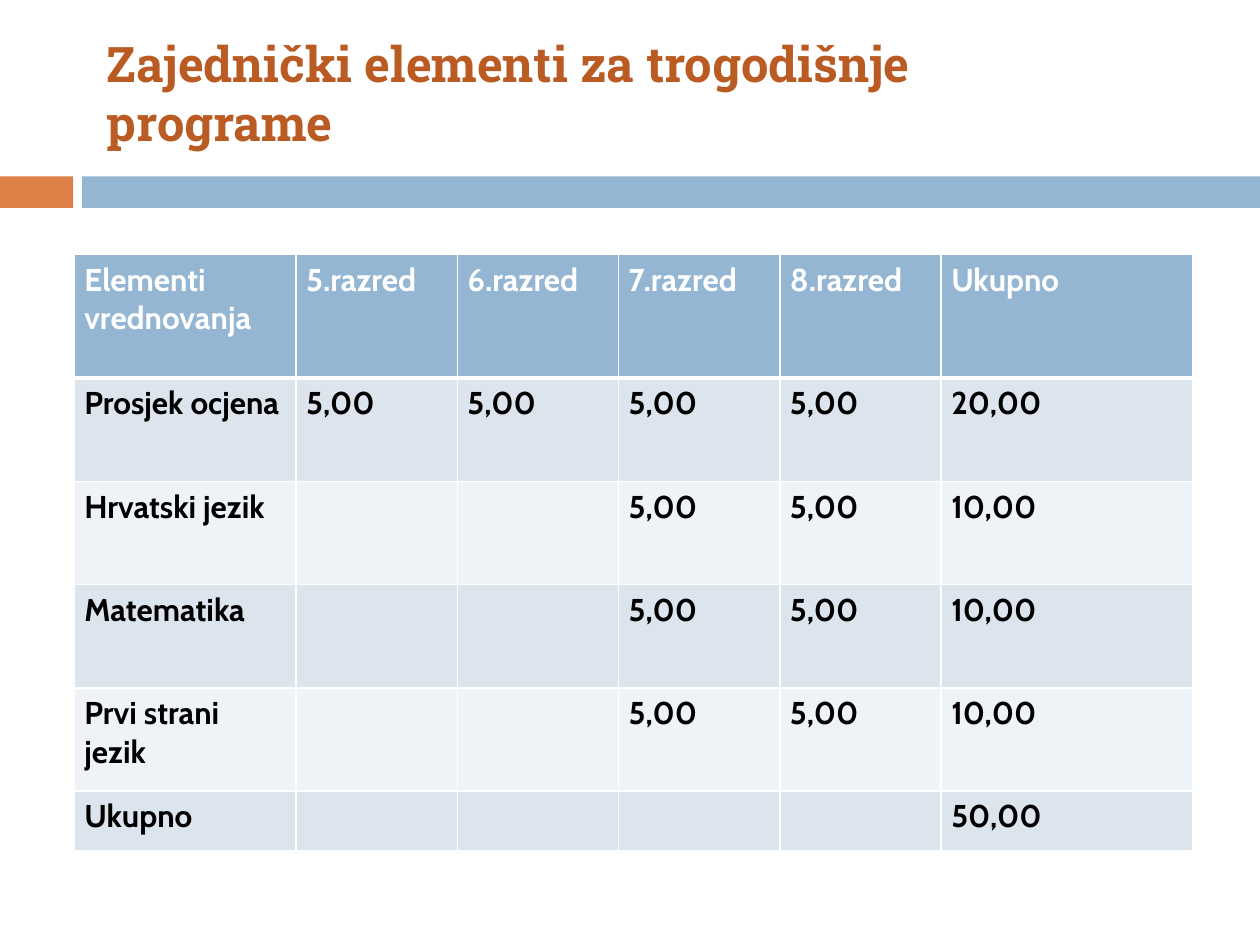
from lxml import etree
from pptx import Presentation
from pptx.dml.color import RGBColor
from pptx.enum import shapes, text
from pptx.oxml import ns
from pptx.util import Inches, Pt

BLUE, ORANGE, WHITE = "94B6D2", "DD8047", "FFFFFF"
BANDS = ["DCE5EE", "EEF3F7"]


def rgb(value):
    return RGBColor.from_string(value)


def add_border(cell, side, points):
    """Draw one white cell edge; call in the order L, R, T, B, before the fill."""
    edge = etree.SubElement(cell._tc.get_or_add_tcPr(), ns.qn(f"a:ln{side}"), w=str(Pt(points)))
    fill = etree.SubElement(edge, ns.qn("a:solidFill"))
    etree.SubElement(fill, ns.qn("a:srgbClr"), val=WHITE)


prs = Presentation()
prs.slide_width, prs.slide_height = Inches(10), Inches(7.5)
slide = prs.slides.add_slide(prs.slide_layouts[6])

# Divider band under the title
for left, width, color in [(0, 0.58, ORANGE), (0.65, 9.35, BLUE)]:
    band = slide.shapes.add_shape(shapes.MSO_SHAPE.RECTANGLE, Inches(left), Inches(1.4),
                                  Inches(width), Inches(0.25))
    band.shadow.inherit = False
    band.fill.solid()
    band.fill.fore_color.rgb = rgb(color)
    band.line.fill.background()

# Title
title = slide.shapes.add_textbox(Inches(0.75), Inches(0.36), Inches(8.11), Inches(0.75)).text_frame
title.word_wrap = True
title.vertical_anchor = text.MSO_ANCHOR.MIDDLE
title.text = "Zajednički elementi za trogodišnje programe"
title_font = title.paragraphs[0].runs[0].font
for key, value in {"name": "Roboto Slab", "size": Pt(28), "bold": True}.items():
    setattr(title_font, key, value)
title_font.color.rgb = rgb("B95B22")

# Table of grading elements
grades = [
    ["Elementi vrednovanja", "5.razred", "6.razred", "7.razred", "8.razred", "Ukupno"],
    ["Prosjek ocjena", "5,00", "5,00", "5,00", "5,00", "20,00"],
    ["Hrvatski jezik", "", "", "5,00", "5,00", "10,00"],
    ["Matematika", "", "", "5,00", "5,00", "10,00"],
    ["Prvi strani jezik", "", "", "5,00", "5,00", "10,00"],
    ["Ukupno", "", "", "", "", "50,00"],
]
column_widths = [1.76] + [1.28] * 4 + [2]
row_heights = [0.98] + [0.82] * 4 + [0.47]
cell_font = {"name": "Cabin", "size": Pt(18), "bold": True}
cell_margins = {"margin_left": Inches(0.08), "margin_right": Inches(0.08),
                "margin_top": Inches(0.05), "margin_bottom": Inches(0.05)}

table = slide.shapes.add_table(len(row_heights), len(column_widths), Inches(0.59), Inches(2.02),
                               Inches(sum(column_widths)), Inches(sum(row_heights))).table
for column, width in zip(table.columns, column_widths):
    column.width = Inches(width)

for r, (row, height, labels) in enumerate(zip(table.rows, row_heights, grades)):
    row.height = Inches(height)
    borders = {"L": 1, "R": 1, "T": 3 if r == 1 else 1, "B": 3 if r == 0 else 1}
    for cell, label in zip(row.cells, labels):
        for side, points in borders.items():
            add_border(cell, side, points)
        cell.fill.solid()
        cell.fill.fore_color.rgb = rgb(BLUE if r == 0 else BANDS[(r - 1) % 2])
        for key, value in cell_margins.items():
            setattr(cell, key, value)
        if not label:
            continue
        cell.text = label
        font = cell.text_frame.paragraphs[0].runs[0].font
        for key, value in cell_font.items():
            setattr(font, key, value)
        font.color.rgb = rgb(WHITE if r == 0 else "000000")

prs.save("out.pptx")
